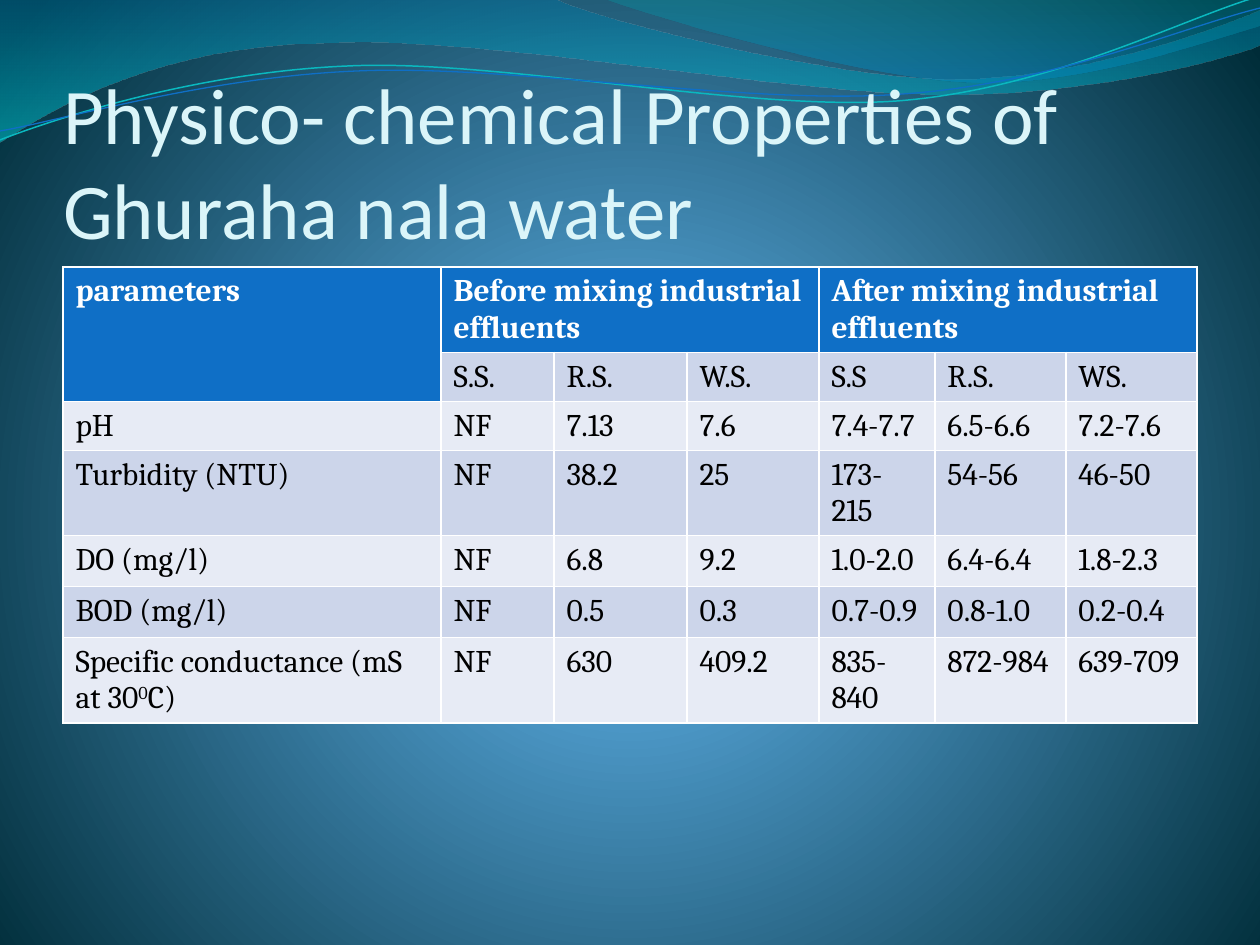
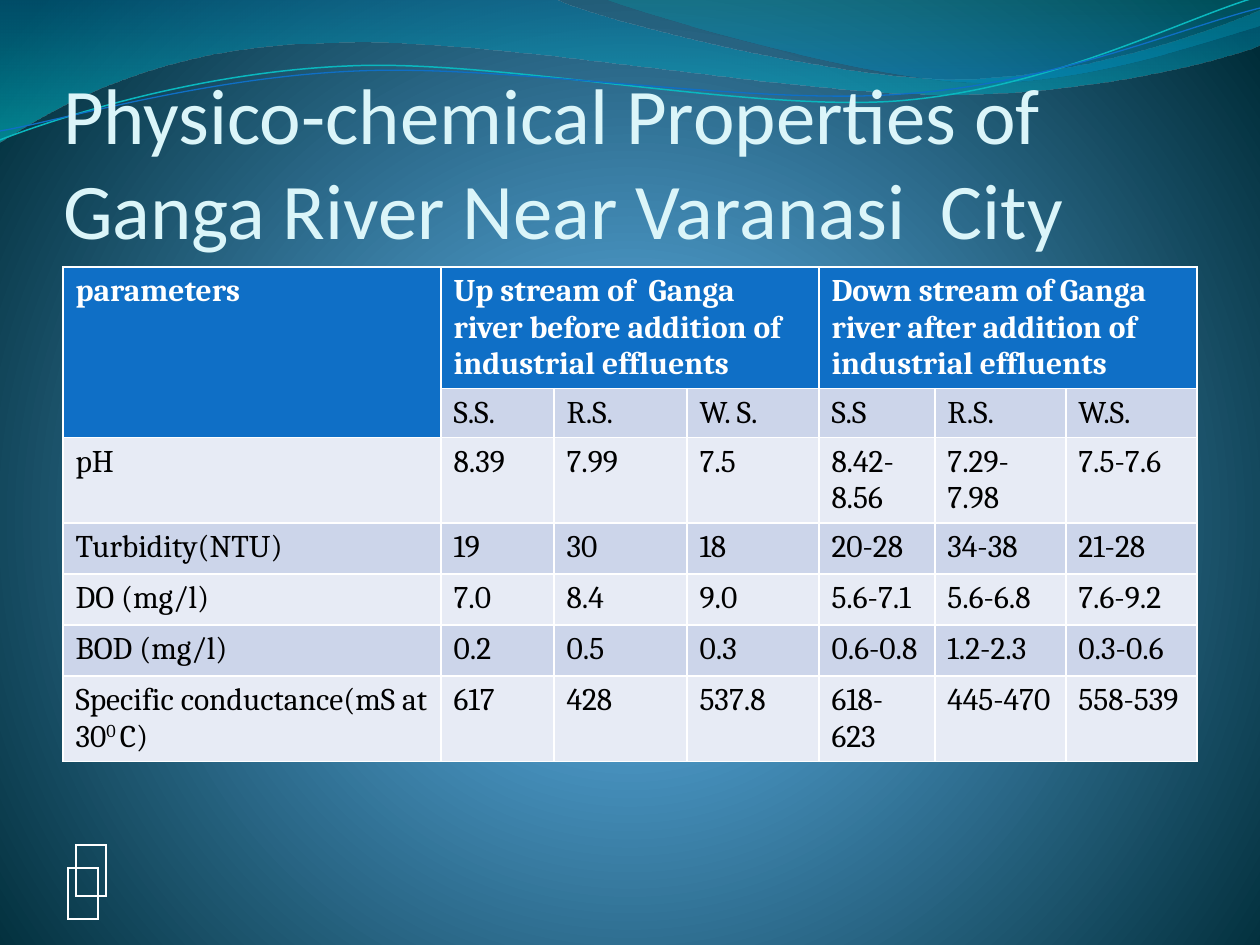
from math import cos, radians, sin

from pptx import Presentation
from pptx.dml.color import RGBColor
from pptx.enum.text import MSO_ANCHOR, MSO_AUTO_SIZE, PP_ALIGN
from pptx.oxml import parse_xml
from pptx.oxml.ns import nsdecls
from pptx.util import Emu, Pt

COLORS = {
    "title": "DBF5F9", "header": "0F6FC6", "dark_band": "CCD5EA", "light_band": "E7EBF5",
    "white": "FFFFFF", "black": "000000", "teal_line": "0AB8BF", "blue_line": "0F6FC6",
}
BACKDROP = [(0, "4AA0D6", 100), (25, "4C98C7", 100), (100, "002C38", 100)]
RADIAL = '<a:path path="circle"><a:fillToRect l="10000" t="110000" r="10000" b="100000"/></a:path>'
DOWNWARD = '<a:lin ang="5400000" scaled="0"/>'

WAVES = [
    {"stops": [(0, "0074A1", 45), (100, "00C6CF", 55)],
     "steps": [[(0, 0)], [(554, -1)], [(600, 21), (837, 79), (955, 79)],
               [(1074, 79), (1207, 33), (1260, 11)], [(1261, 45)],
               [(1239, 55), (1096, 96), (940, 94)], [(784, 94), (481, 35), (324, 43)],
               [(163, 45), (58, 105), (-1, 142)]]},
    {"stops": [(0, "00A1A9", 30), (80, "008BBF", 45)],
     "steps": [[(604, -1)], [(641, 14), (859, 78), (969, 82)],
               [(1079, 87), (1211, 40), (1260, 26)], [(1260, 0)]]},
    {"line": ("teal_line", 0.85), "center": (629, 72),
     "steps": [[(0, 140)], [(60, 117), (199, 72), (349, 66)],
               [(498, 59), (747, 112), (898, 101)], [(1050, 89), (1182, 19), (1257, -3)]]},
    {"line": ("blue_line", 0.75), "center": (629, 74),
     "steps": [[(0, 131)], [(59, 121), (207, 77), (357, 71)],
               [(508, 64), (752, 106), (903, 94)], [(1053, 84), (1186, 26), (1260, 8)]]},
]
LINE_TILT = -2.7

SLIDES = [
    {"title": "Physico- chemical Properties of Ghuraha nala water",
     "groups": ["Before mixing industrial effluents", "After mixing industrial effluents"],
     "heights": [44, 44, 25, 51, 51, 51, 51], "frame_height": 580,
     "rows": [
         ["", "S.S.", "R.S.", "W.S.", "S.S", "R.S.", "WS."],
         ["pH", "NF", "7.13", "7.6", "7.4-7.7", "6.5-6.6", "7.2-7.6"],
         ["Turbidity (NTU)", "NF", "38.2", "25", "173-215", "54-56", "46-50"],
         ["DO (mg/l)", "NF", "6.8", "9.2", "1.0-2.0", "6.4-6.4", "1.8-2.3"],
         ["BOD (mg/l)", "NF", "0.5", "0.3", "0.7-0.9", "0.8-1.0", "0.2-0.4"],
         ["Specific conductance (mS at 30^0^C)", "NF", "630", "409.2",
          "835-840", "872-984", "639-709"]],
     "boxes_behind": [], "boxes_in_front": []},
    {"title": "Physico-chemical Properties of Ganga River Near Varanasi  City",
     "groups": ["Up stream of  Ganga  river before addition of industrial effluents",
                "Down stream of Ganga river after addition of industrial effluents"],
     "heights": [25, 25, 25, 51, 51, 51, 51], "frame_height": 543,
     "rows": [
         ["", "S.S.", "R.S.", "W. S.", "S.S", "R.S.", "W.S."],
         ["pH", "8.39", "7.99", "7.5", "8.42-8.56", "7.29-7.98", "7.5-7.6"],
         ["Turbidity(NTU)", "19", "30", "18", "20-28", "34-38", "21-28"],
         ["DO (mg/l)", "7.0", "8.4", "9.0", "5.6-7.1", "5.6-6.8", "7.6-9.2"],
         ["BOD (mg/l)", "0.2", "0.5", "0.3", "0.6-0.8", "1.2-2.3", "0.3-0.6"],
         ["Specific conductance(mS at 30^0 ^C)", "617", "428", "537.8",
          "618-623", "445-470", "558-539"]],
     "boxes_behind": [(68, 868, 30, 50, True)],
     "boxes_in_front": [(76, 845, 30, 50, True), (64, 810, 1137, 38, False)]},
]
WIDTHS = [378, 113, 133, 132, 116, 131, 131]
GROUP_COLUMNS = [1, 4]
TABLE_AT = (63, 267)


def px(length):
    return Emu(round(length * 914400 / 126))


def rgb(name):
    return RGBColor.from_string(COLORS[name])


def apply(target, formats):
    for attribute, value in formats.items():
        setattr(target, attribute, value)


TITLE_BOX = {"left": px(63), "top": px(97), "width": px(1134), "height": px(158)}
TITLE_FRAME = {"margin_left": 0, "margin_right": 0, "margin_top": px(6), "margin_bottom": 0,
               "vertical_anchor": MSO_ANCHOR.BOTTOM, "word_wrap": True,
               "auto_size": MSO_AUTO_SIZE.NONE}
TITLE_FONT = {"size": Pt(45), "name": "Calibri", "bold": False}
CELL_FONT = {"size": Pt(18), "name": "Cambria"}
PLAIN_TABLE = {"first_row": False, "horz_banding": False}


def paint_gradient(owner, fill, stops, direction):
    fill.solid()
    marks = "".join(
        f'<a:gs pos="{place * 1000}"><a:srgbClr val="{color}">'
        f'<a:alpha val="{alpha * 1000}"/></a:srgbClr></a:gs>' for place, color, alpha in stops)
    gradient = parse_xml(f'<a:gradFill {nsdecls("a")} rotWithShape="1">'
                         f'<a:gsLst>{marks}</a:gsLst>{direction}</a:gradFill>')
    solid = owner.xpath("./p:cSld/p:bg/p:bgPr/a:solidFill | ./p:spPr/a:solidFill")[0]
    solid.getparent().replace(solid, gradient)


def turn(point, center, degrees):
    angle = radians(degrees)
    dx, dy = point[0] - center[0], point[1] - center[1]
    return (center[0] + dx * cos(angle) - dy * sin(angle),
            center[1] + dx * sin(angle) + dy * cos(angle))


def bend(ribbon, steps):
    corners = iter(ribbon.element.xpath(".//a:lnTo"))
    for step in steps[1:]:
        first, *others = [next(corners) for _ in step]
        if others:
            curve = parse_xml(f'<a:cubicBezTo {nsdecls("a")}/>')
            first.addprevious(curve)
            for corner in [first, *others]:
                curve.append(corner[0])
                corner.getparent().remove(corner)


def draw_wave(slide, wave):
    points = [point for step in wave["steps"] for point in step]
    if "center" in wave:
        points = [turn(point, wave["center"], -LINE_TILT) for point in points]
    points = [(px(x), px(y)) for x, y in points]
    outline = slide.shapes.build_freeform(*points[0])
    outline.add_line_segments(points[1:], close="stops" in wave)
    ribbon = outline.convert_to_shape()
    bend(ribbon, wave["steps"])
    ribbon.shadow.inherit = False
    if "stops" in wave:
        paint_gradient(ribbon.element, ribbon.fill, wave["stops"], DOWNWARD)
        ribbon.line.fill.background()
    else:
        color, weight = wave["line"]
        ribbon.rotation = LINE_TILT
        ribbon.fill.background()
        ribbon.line.color.rgb = rgb(color)
        ribbon.line.width = Pt(weight)
    return ribbon


def border(cell, visible):
    paint = (f'<a:solidFill><a:srgbClr val="{COLORS["white"]}"/></a:solidFill>'
             if visible else "<a:noFill/>")
    for side in "LRTB":
        cell._tc.get_or_add_tcPr().append(parse_xml(
            f'<a:ln{side} {nsdecls("a")} w="12700">{paint}</a:ln{side}>'))


def write(cell, text, color, bold):
    paragraph = cell.text_frame.paragraphs[0]
    for index, part in enumerate(text.split("^")):
        run = paragraph.add_run()
        run.text = part
        apply(run.font, {**CELL_FONT, "bold": bold})
        run.font.color.rgb = rgb(color)
        if index % 2:
            run.font._element.set("baseline", "30000")


def add_grid(slide, left, top, widths, heights, frame_height, bordered=True):
    frame = slide.shapes.add_table(len(heights), len(widths), px(left), px(top),
                                   px(sum(widths)), px(frame_height))
    grid = frame.table
    apply(grid, PLAIN_TABLE)
    for column, width in zip(grid.columns, widths):
        column.width = px(width)
    for row, height in zip(grid.rows, heights):
        row.height = px(height)
    frame.height = px(frame_height)
    for cell in grid.iter_cells():
        border(cell, bordered)
        cell.fill.background()
    return grid


def add_boxes(slide, boxes):
    for left, top, width, height, bordered in boxes:
        add_grid(slide, left, top, [width], [0], height, bordered)


def add_measurements(slide, content):
    grid = add_grid(slide, *TABLE_AT, WIDTHS, content["heights"], content["frame_height"])
    header = ["parameters"] + [""] * 6
    for column, group in zip(GROUP_COLUMNS, content["groups"]):
        header[column] = group
    for r, row in enumerate([header, *content["rows"]]):
        for c, text in enumerate(row):
            heading = r == 0 or (r == 1 and c == 0)
            cell = grid.cell(r, c)
            cell.fill.solid()
            cell.fill.fore_color.rgb = rgb(
                "header" if heading else "dark_band" if r % 2 else "light_band")
            if text:
                write(cell, text, "white" if heading else "black", heading)
    grid.cell(0, 0).merge(grid.cell(1, 0))
    for column in GROUP_COLUMNS:
        grid.cell(0, column).merge(grid.cell(0, column + 2))


def add_title(slide, text):
    title = slide.shapes.title
    apply(title, TITLE_BOX)
    apply(title.text_frame, TITLE_FRAME)
    title.text_frame.text = text
    paragraph = title.text_frame.paragraphs[0]
    paragraph.alignment = PP_ALIGN.LEFT
    apply(paragraph.runs[0].font, TITLE_FONT)
    paragraph.runs[0].font.color.rgb = rgb("title")


def dress_layout(layout, slide):
    paint_gradient(layout.element, layout.background.fill, BACKDROP, RADIAL)
    for footer in list(layout.placeholders)[1:]:
        layout.shapes.element.remove(footer.element)
    for ribbon in [draw_wave(slide, wave) for wave in WAVES]:
        layout.shapes.element.append(ribbon.element)


def main():
    deck = Presentation()
    apply(deck, {"slide_width": px(1260), "slide_height": px(945)})
    layout = deck.slide_layouts[5]
    slides = [deck.slides.add_slide(layout) for _ in SLIDES]
    dress_layout(layout, slides[0])
    for slide, content in zip(slides, SLIDES):
        add_title(slide, content["title"])
        add_boxes(slide, content["boxes_behind"])
        add_measurements(slide, content)
        add_boxes(slide, content["boxes_in_front"])
    deck.save("out.pptx")


if __name__ == "__main__":
    main()
